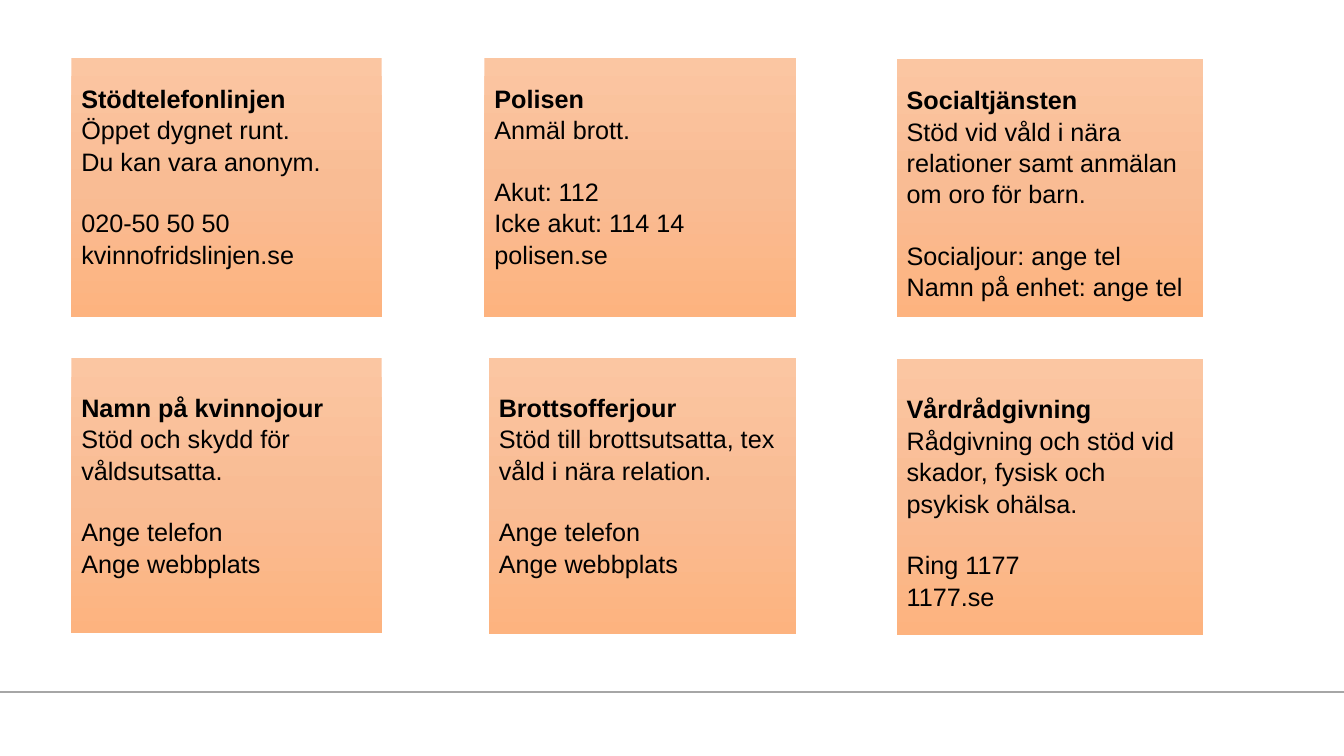
from copy import deepcopy
from dataclasses import dataclass

from lxml.etree import SubElement
from pptx import Presentation
from pptx.dml.color import RGBColor
from pptx.enum.shapes import MSO_CONNECTOR, MSO_SHAPE
from pptx.enum.text import MSO_ANCHOR, PP_ALIGN
from pptx.oxml.ns import qn
from pptx.util import Cm, Pt


@dataclass(frozen=True)
class Theme:
    """Colours and type of the slide."""
    font: str = "Arial"
    size: float = 18
    leading: float = 1.04
    blank_line: float = 21.5
    text: str = "000000"
    rule: str = "A6A6A6"
    rule_width: float = 1.5
    gradient: tuple = ((0, "FBC6A2"), (0.5, "F9BC94"), (1, "FDB37F"))


THEME = Theme()
WIDTH, HEIGHT = 33.87, 19.05
TOP_INSET, BOTTOM_INSET = 0.62, 0.84

TOP_ROW = [
    ((1.8, 1.45, 7.82, 6.53), "Stödtelefonlinjen",
     ["Öppet dygnet runt.", "Du kan vara anonym."],
     ["020-50 50 50", "kvinnofridslinjen.se"]),
    ((12.21, 1.45, 7.85, 6.53), "Polisen",
     ["Anmäl brott."],
     ["Akut: 112", "Icke akut: 114 14", "polisen.se"]),
    ((22.6, 1.48, 7.72, 6.5), "Socialtjänsten",
     ["Stöd vid våld i nära relationer samt anmälan om oro för barn."],
     ["Socialjour: ange tel", "Namn på enhet: ange tel"]),
]
BOTTOM_ROW = [
    ((1.8, 9.01, 7.82, 6.95), "Namn på kvinnojour",
     ["Stöd och skydd för våldsutsatta."],
     ["Ange telefon", "Ange webbplats"]),
    ((12.32, 9.01, 7.74, 6.98), "Brottsofferjour",
     ["Stöd till brottsutsatta, tex våld i nära relation."],
     ["Ange telefon", "Ange webbplats"]),
    ((22.6, 9.05, 7.72, 6.95), "Vårdrådgivning",
     ["Rådgivning och stöd vid skador, fysisk och psykisk ohälsa."],
     ["Ring 1177", "1177.se"]),
]


def fill_gradient(sp):
    """Fill a shape with the theme gradient, running downwards."""
    sp.fill.gradient()
    sp.fill.gradient_angle = 270
    stops = sp._element.spPr.find(".//" + qn("a:gsLst"))
    stops.insert(1, deepcopy(stops[0]))
    for stop, (position, color) in zip(sp.fill.gradient_stops, THEME.gradient):
        stop.position = position
        stop.color.rgb = RGBColor.from_string(color)


def add_line(tf, text, first=False, bold=False, gap=False):
    """Add one paragraph, with a blank line's space above when gap is set."""
    p = tf.paragraphs[0] if first else tf.add_paragraph()
    p.alignment = PP_ALIGN.LEFT
    p.line_spacing = THEME.leading
    if gap:
        p.space_before = Pt(THEME.blank_line)
    r = p.add_run()
    r.text = text
    r.font.name = THEME.font
    r.font.size = Pt(THEME.size)
    r.font.bold = bold
    r.font.color.rgb = RGBColor.from_string(THEME.text)


def add_card(s, box, inset, title, about, contacts):
    """Draw a contact card in the given box."""
    sp = s.shapes.add_shape(MSO_SHAPE.RECTANGLE, *map(Cm, box))
    sp.shadow.inherit = False
    sp.line.fill.background()
    fill_gradient(sp)
    tf = sp.text_frame
    tf.word_wrap = True
    tf.vertical_anchor = MSO_ANCHOR.TOP
    tf.margin_top = Cm(inset)
    add_line(tf, title, first=True, bold=True)
    for text in about:
        add_line(tf, text)
    for i, text in enumerate(contacts):
        add_line(tf, text, gap=i == 0)


def add_footer_rule(s, left, top, width):
    """Draw the horizontal rule above the footer."""
    line = s.shapes.add_connector(
        MSO_CONNECTOR.STRAIGHT, Cm(left), Cm(top), Cm(left + width), Cm(top))
    line.line.color.rgb = RGBColor.from_string(THEME.rule)
    line.line.width = Pt(THEME.rule_width)
    SubElement(line._element.spPr, qn("a:effectLst"))


def main():
    """Build and save the contact slide."""
    prs = Presentation()
    prs.slide_width, prs.slide_height = Cm(WIDTH), Cm(HEIGHT)
    s = prs.slides.add_slide(prs.slide_layouts[6])
    add_footer_rule(s, 0, 17.44, WIDTH)
    for row, inset in ((TOP_ROW, TOP_INSET), (BOTTOM_ROW, BOTTOM_INSET)):
        for box, title, about, contacts in row:
            add_card(s, box, inset, title, about, contacts)
    prs.save("out.pptx")


if __name__ == "__main__":
    main()
